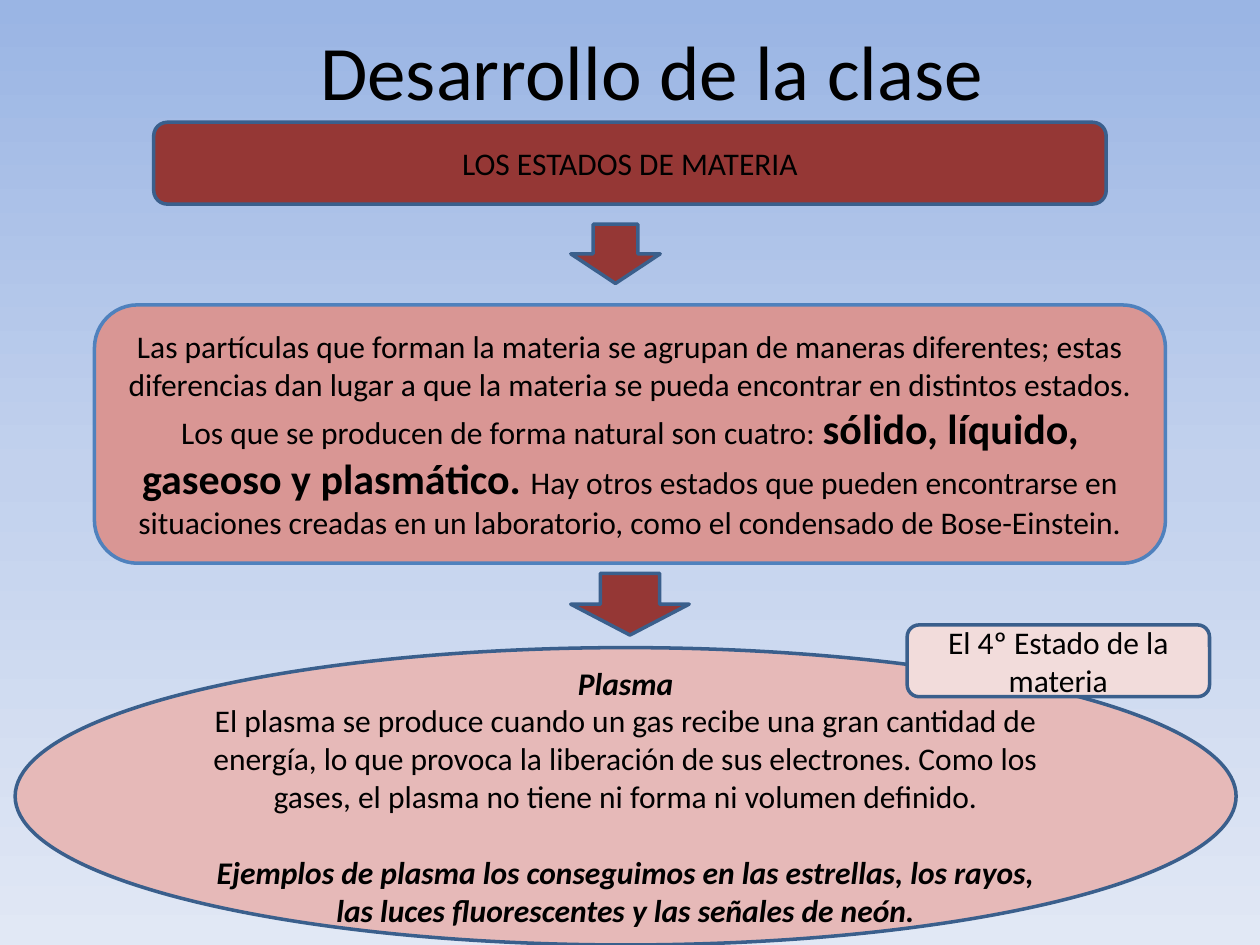
import copy
import dataclasses

import pptx
import pptx.dml.color
import pptx.enum.shapes
import pptx.enum.text
import pptx.util

Inches = pptx.util.Inches
Pt = pptx.util.Pt
Kind = pptx.enum.shapes.MSO_SHAPE


def tint(code):
    return pptx.dml.color.RGBColor.from_string(code)


@dataclasses.dataclass(frozen=True)
class Theme:
    font: str = "Calibri"
    ink: str = "000000"
    dark: str = "953735"
    rose: str = "D99694"
    blush: str = "E6B9B8"
    pale: str = "F2DCDB"
    edge: str = "3A5F8C"
    blue: str = "4F81BD"
    sky: tuple = ((0, "9AB5E4"), (0.5, "C2D1ED"), (1, "E1E8F5"))
    title: int = 44
    large: int = 24
    body: int = 18
    gap: int = 22
    line: int = 2


class Deck:
    def __init__(self, theme):
        self.theme = theme
        self.file = pptx.Presentation()
        self.file.slide_width, self.file.slide_height = Inches(10), Inches(7.5)
        self.slide = self.file.slides.add_slide(self.file.slide_layouts[6])

    def back(self):
        """Fill the background from top to bottom with the sky colours."""
        fill = self.slide.background.fill
        fill.gradient()
        fill.gradient_angle = 270
        stops = self.slide.element.xpath(".//a:gsLst")[0]
        stops.append(copy.deepcopy(stops[-1]))
        for stop, (place, code) in zip(fill.gradient_stops, self.theme.sky):
            stop.position = place
            stop.color.rgb = tint(code)

    def label(self, shape, paras):
        """Set paragraphs, each a list of (text, format values) runs."""
        frame = shape.text_frame
        frame.word_wrap = True
        frame.vertical_anchor = pptx.enum.text.MSO_ANCHOR.MIDDLE
        base = {"name": self.theme.font, "size": Pt(self.theme.body)}
        for n, runs in enumerate(paras):
            para = frame.add_paragraph() if n else frame.paragraphs[0]
            para.alignment = pptx.enum.text.PP_ALIGN.CENTER
            for text, form in runs:
                run = para.add_run()
                run.text = text
                for key, value in (base | form).items():
                    setattr(run.font, key, value)
                run.font.color.rgb = tint(self.theme.ink)

    def title(self, box, text):
        shape = self.slide.shapes.add_textbox(*map(Inches, box))
        self.label(shape, [[(text, {"size": Pt(self.theme.title)})]])

    def shape(self, kind, box, fill, paras=(), edge=None):
        shape = self.slide.shapes.add_shape(kind, *map(Inches, box))
        shape.shadow.inherit = False
        shape.fill.solid()
        shape.fill.fore_color.rgb = tint(fill)
        shape.line.color.rgb = tint(edge or self.theme.edge)
        shape.line.width = Pt(self.theme.line)
        self.label(shape, paras)
        return shape


def main():
    theme = Theme()
    deck = Deck(theme)
    deck.back()
    deck.title((2.28, 0.11, 5.79, 0.89), "Desarrollo de la clase")

    deck.shape(Kind.ROUNDED_RECTANGLE, (1.22, 0.97, 7.56, 0.65), theme.dark,
               [[("LOS ESTADOS DE MATERIA", {})]])

    states = [
        ("Las partículas que forman la materia se agrupan de maneras "
         "diferentes; estas diferencias dan lugar a que la materia se pueda "
         "encontrar en distintos estados. Los que se producen de forma "
         "natural son cuatro: ", {}),
        ("sólido, líquido, gaseoso y plasmático. ",
         {"size": Pt(theme.large), "bold": True}),
        ("Hay otros estados que pueden encontrarse en situaciones creadas en "
         "un laboratorio, como el condensado de Bose-Einstein.", {}),
    ]
    deck.shape(Kind.ROUNDED_RECTANGLE, (0.75, 2.42, 8.5, 2.05), theme.rose,
               [states], theme.blue)

    for box in ((4.53, 1.78, 0.71, 0.47), (4.53, 4.55, 0.94, 0.49)):
        deck.shape(Kind.DOWN_ARROW, box, theme.dark)

    strong = {"bold": True, "italic": True}
    plasma = [
        [("Plasma", strong)],
        [("El plasma se produce cuando un gas recibe una gran cantidad de "
          "energía, lo que provoca la liberación de sus electrones. Como los "
          "gases, el plasma no tiene ni forma ni volumen definido.", {})],
        [("Ejemplos de plasma los conseguimos en las estrellas, los rayos, "
          "las luces fluorescentes y las señales de neón.", strong)],
    ]
    oval = deck.shape(Kind.OVAL, (0.12, 5.14, 9.69, 2.36), theme.blush, plasma)
    oval.text_frame.paragraphs[-1].space_before = Pt(theme.gap)

    deck.shape(Kind.ROUNDED_RECTANGLE, (7.2, 4.96, 2.4, 0.57), theme.pale,
               [[("El 4º Estado de la materia", {})]])
    deck.file.save("out.pptx")


if __name__ == "__main__":
    main()
